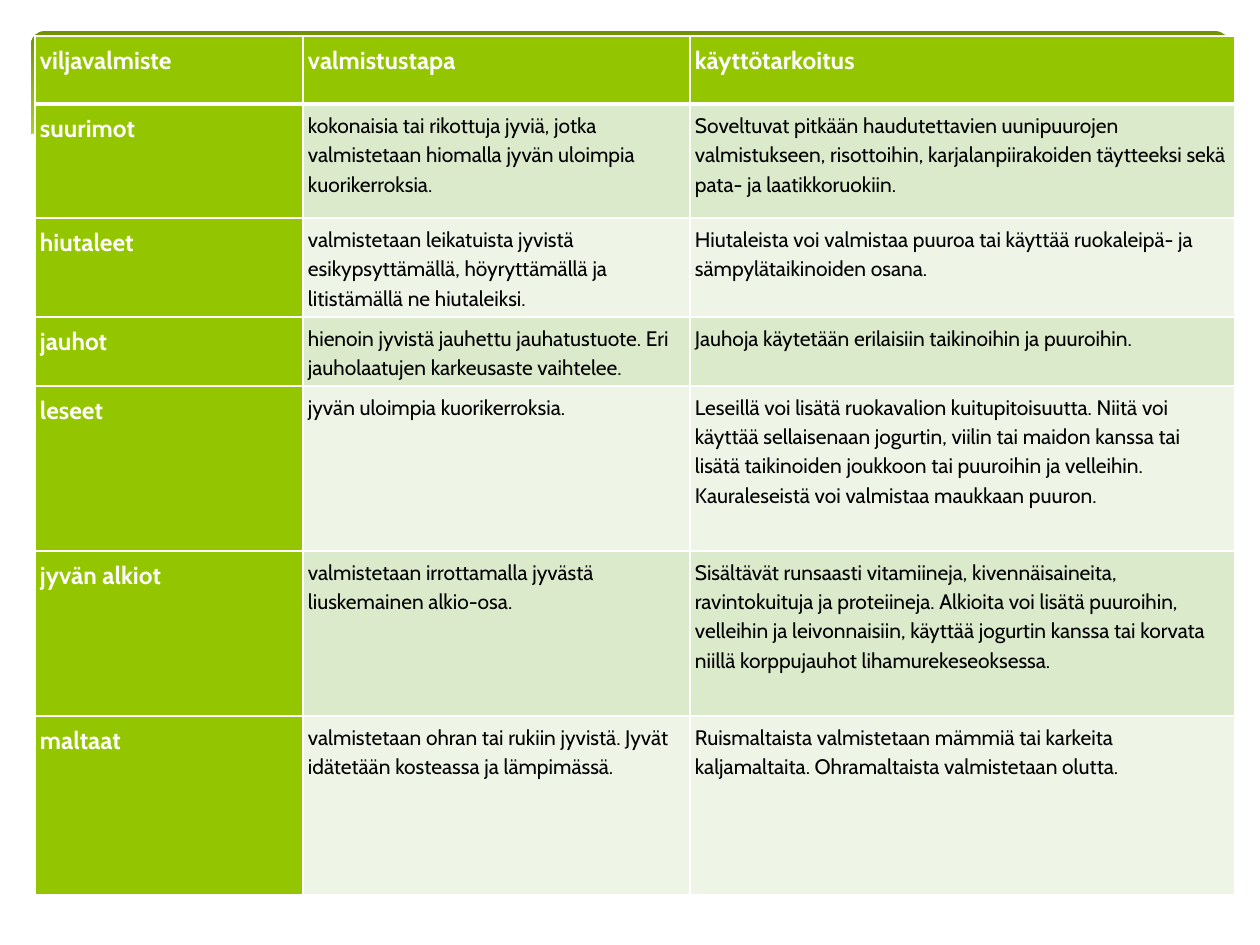
"""Builds a slide with a table of grain products, their making and their use."""
from lxml import etree
from pptx import Presentation
from pptx.dml.color import RGBColor
from pptx.enum.shapes import MSO_SHAPE
from pptx.oxml.ns import qn
from pptx.util import Pt

ROUNDED = MSO_SHAPE.ROUNDED_RECTANGLE
PX = 914400 / 126
FONT = "Cabin"
COLORS = {
    "white": "FFFFFF",
    "black": "000000",
    "green": "94C600",
    "dark green": "6F9400",
    "lime": "D0FF44",
    "odd row": "DCEACC",
    "even row": "EEF5E7",
}
ROWS = [
    ("viljavalmiste", "valmistustapa", "käyttötarkoitus"),
    ("suurimot",
     "kokonaisia tai rikottuja jyviä, jotka valmistetaan hiomalla jyvän "
     "uloimpia kuorikerroksia.",
     "Soveltuvat pitkään haudutettavien uunipuurojen valmistukseen, risottoihin, "
     "karjalanpiirakoiden täytteeksi sekä pata- ja laatikkoruokiin."),
    ("hiutaleet",
     "valmistetaan leikatuista jyvistä esikypsyttämällä, höyryttämällä ja "
     "litistämällä ne hiutaleiksi.",
     "Hiutaleista voi valmistaa puuroa tai käyttää ruokaleipä- ja "
     "sämpylätaikinoiden osana."),
    ("jauhot",
     "hienoin jyvistä jauhettu jauhatustuote. Eri jauholaatujen karkeusaste "
     "vaihtelee.",
     "Jauhoja käytetään erilaisiin taikinoihin ja puuroihin."),
    ("leseet",
     "jyvän uloimpia kuorikerroksia.",
     "Leseillä voi lisätä ruokavalion kuitupitoisuutta. Niitä voi käyttää "
     "sellaisenaan jogurtin, viilin tai maidon kanssa tai lisätä taikinoiden "
     "joukkoon tai puuroihin ja velleihin. Kauraleseistä voi valmistaa maukkaan "
     "puuron."),
    ("jyvän alkiot",
     "valmistetaan irrottamalla jyvästä liuskemainen alkio-osa.",
     "Sisältävät runsaasti vitamiineja, kivennäisaineita, ravintokuituja ja "
     "proteiineja. Alkioita voi lisätä puuroihin, velleihin ja leivonnaisiin, "
     "käyttää jogurtin kanssa tai korvata niillä korppujauhot "
     "lihamurekeseoksessa."),
    ("maltaat",
     "valmistetaan ohran tai rukiin jyvistä. Jyvät idätetään kosteassa ja "
     "lämpimässä.",
     "Ruismaltaista valmistetaan mämmiä tai karkeita kaljamaltaita. "
     "Ohramaltaista valmistetaan olutta."),
]
TABLE_LEFT, TABLE_TOP = 35, 36
COLUMN_WIDTHS = [268, 387, 545]
ROW_HEIGHTS = [68, 114, 99, 69, 165, 165, 179]
BANNER = (31, 31, 1198, 197)
WAVE = [(29, 135), (58, 126), (107, 112), (166, 102), (243, 98), (341, 104),
        (459, 121), (563, 144), (699, 175), (817, 197), (943, 212), (1054, 215),
        (1146, 204), (1231, 177), (1231, 282), (29, 282)]


def px(length):
    return round(length * PX)


def rgb(name):
    return RGBColor.from_string(COLORS[name])


def add_banner(page):
    banner = page.shapes.add_shape(ROUNDED, *map(px, BANNER))
    banner.adjustments[0] = 0.07
    banner.shadow.inherit = False
    banner.line.fill.background()
    banner.fill.gradient()
    banner.fill.gradient_angle = 270
    stops = banner.fill.gradient_stops
    for stop, position, name in zip(stops, (0, 0.9), ("dark green", "lime")):
        stop.position = position
        stop.color.rgb = rgb(name)

    builder = page.shapes.build_freeform(*WAVE[0], scale=PX)
    builder.add_line_segments(WAVE[1:], close=True)
    wave = builder.convert_to_shape()
    wave.shadow.inherit = False
    wave.fill.solid()
    wave.fill.fore_color.rgb = rgb("white")
    wave.line.fill.background()


def set_borders(cell, row):
    widths = {"a:lnL": 1, "a:lnR": 1,
              "a:lnT": 3 if row == 1 else 1, "a:lnB": 3 if row == 0 else 1}
    properties = cell._tc.get_or_add_tcPr()
    for place, (tag, width) in enumerate(widths.items()):
        line = etree.Element(qn(tag), w=str(Pt(width)))
        fill = etree.SubElement(line, qn("a:solidFill"))
        etree.SubElement(fill, qn("a:srgbClr"), val=COLORS["white"])
        properties.insert(place, line)


def fill_cell(cell, text, row, column):
    heading = row == 0 or column == 0
    band = "odd row" if row % 2 else "even row"
    cell.fill.solid()
    cell.fill.fore_color.rgb = rgb("green" if heading else band)
    cell.margin_left = cell.margin_right = px(5)
    cell.margin_top = cell.margin_bottom = px(5)
    set_borders(cell, row)
    para = cell.text_frame.paragraphs[0]
    para.text = text
    para.line_spacing = 1.15
    para.space_after = Pt(10)
    para.font.name = FONT
    para.font.size = Pt(14 if heading else 12)
    para.font.bold = heading
    para.font.color.rgb = rgb("white" if heading else "black")


def add_grain_table(page):
    size = len(ROWS), len(COLUMN_WIDTHS)
    place = TABLE_LEFT, TABLE_TOP, sum(COLUMN_WIDTHS), sum(ROW_HEIGHTS)
    table = page.shapes.add_table(*size, *map(px, place)).table
    table.horz_banding = False
    for column, width in zip(table.columns, COLUMN_WIDTHS):
        column.width = px(width)
    for row, (texts, height) in enumerate(zip(ROWS, ROW_HEIGHTS)):
        table.rows[row].height = px(height)
        for column, text in enumerate(texts):
            fill_cell(table.cell(row, column), text, row, column)


def main():
    deck = Presentation()
    deck.slide_width, deck.slide_height = px(1260), px(945)
    page = deck.slides.add_slide(deck.slide_layouts[6])
    add_banner(page)
    add_grain_table(page)
    deck.save("out.pptx")


if __name__ == "__main__":
    main()
